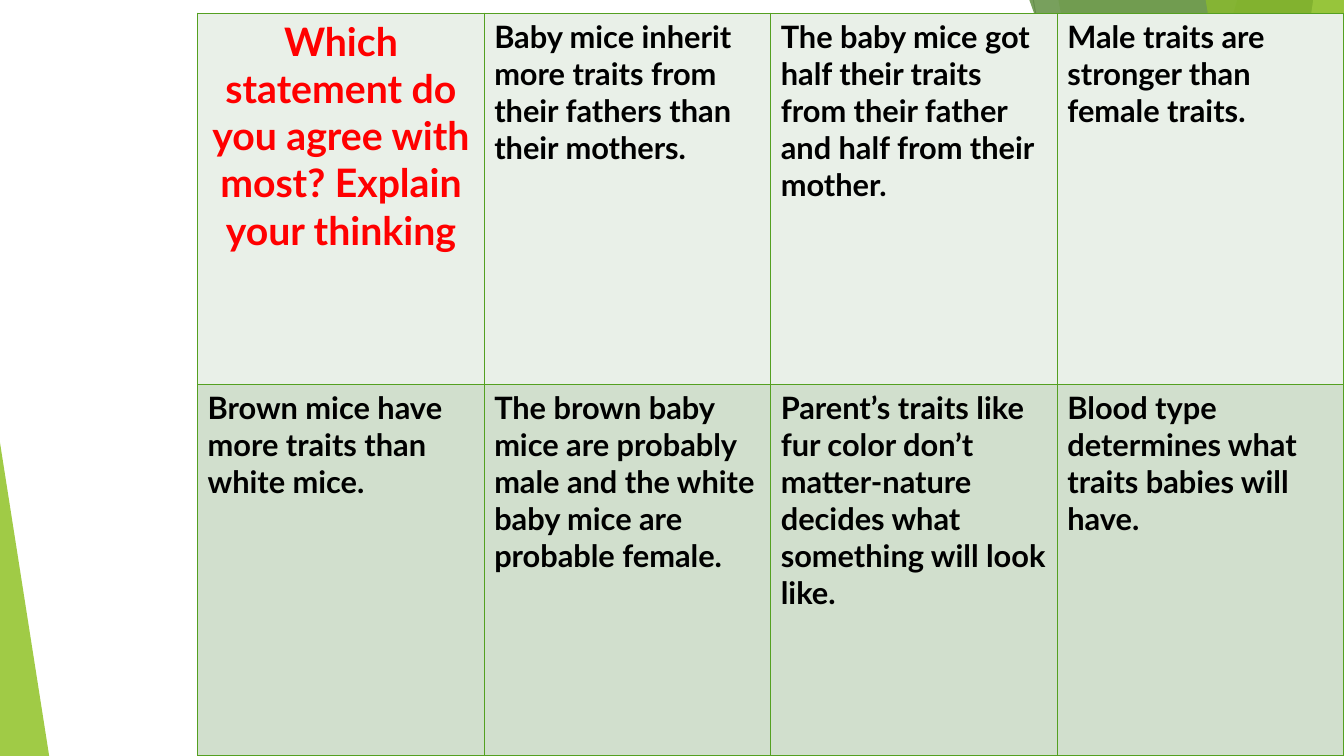
"""Build a slide with a grid of statements about inherited traits in mice."""
from dataclasses import dataclass

from lxml import etree
from pptx import Presentation
from pptx.dml.color import RGBColor
from pptx.enum.shapes import MSO_CONNECTOR, MSO_SHAPE
from pptx.enum.text import PP_ALIGN
from pptx.oxml.ns import qn
from pptx.util import Cm, Pt

STRAIGHT = MSO_CONNECTOR.STRAIGHT
TRIANGLE = MSO_SHAPE.ISOSCELES_TRIANGLE
LEFT, CENTER = PP_ALIGN.LEFT, PP_ALIGN.CENTER
WIDTH, HEIGHT = 33.87, 19.05
FACET_TOP = -0.03


@dataclass(frozen=True)
class Theme:
    font: str = "Lato"
    question_size: int = 28
    statement_size: int = 22
    question: str = "FF0000"
    statement: str = "000000"
    lime: str = "90C226"
    green: str = "54A021"
    forest: str = "3F7819"
    pale_lime: str = "C0E474"
    row_fills: tuple[str, str] = ("E9F0E8", "D1DFCD")
    border_width: float = 1
    ray_width: float = 0.75


THEME = Theme()


@dataclass(frozen=True)
class Ray:
    start: tuple[float, float]
    end: tuple[float, float]
    color: str


@dataclass(frozen=True)
class Facet:
    """Band from a slanted left edge to the right side of the slide."""
    top_x: float
    bottom_x: float
    color: str
    opacity: int


@dataclass(frozen=True)
class Corner:
    """Right triangle standing on the bottom of the slide."""
    left: float
    top: float
    width: float
    apex: float
    color: str
    opacity: int


RAYS = (
    Ray((26.04, 0), (29.41, HEIGHT), "BFBFBF"),
    Ray((WIDTH, 10.24), (20.62, HEIGHT), "D9D9D9"),
)
BACKDROP = (
    Facet(31.19, 25.5, THEME.lime, 30),
    Facet(26.67, 30.05, THEME.lime, 20),
    Corner(24.82, 8.46, 9.05, 1, THEME.green, 72),
    Facet(25.93, 32.79, THEME.forest, 70),
    Facet(33.1, 30.28, THEME.pale_lime, 70),
    Facet(30.38, 33.48, THEME.lime, 65),
    Corner(28.8, 9.98, 5.07, 1, THEME.lime, 80),
    Corner(0, 11.15, 1.24, 0, THEME.lime, 85),
)
STATEMENTS = (
    (
        "Which statement do you agree with most? Explain your thinking",
        "Baby mice inherit more traits from their fathers than their mothers.",
        "The baby mice got half their traits from their father and half from their mother.",
        "Male traits are stronger than female traits.",
    ),
    (
        "Brown mice have more traits than white mice.",
        "The brown baby mice are probably male and the white baby mice are probable female.",
        "Parent’s traits like fur color don’t matter-nature decides what something will look like.",
        "Blood type determines what traits babies will have.",
    ),
)
GRID_LEFT, GRID_TOP = 4.98, 0.33


def draw_ray(slide, ray: Ray) -> None:
    """Draw one thin line without a shadow."""
    line = slide.shapes.add_connector(STRAIGHT, *map(Cm, ray.start + ray.end))
    line.line.color.rgb = RGBColor.from_string(ray.color)
    line.line.width = Pt(THEME.ray_width)
    etree.SubElement(line._element.spPr, qn("a:effectLst"))


def paint(shape, color: str, opacity: int) -> None:
    """Give a shape a translucent fill and no outline or shadow."""
    shape.shadow.inherit = False
    shape.line.fill.background()
    shape.fill.solid()
    shape.fill.fore_color.rgb = RGBColor.from_string(color)
    swatch = shape._element.spPr.find(qn("a:solidFill"))[0]
    etree.SubElement(swatch, qn("a:alpha"), val=str(opacity * 1000))


def draw_facet(slide, facet: Facet) -> None:
    """Draw one slanted band."""
    outline = slide.shapes.build_freeform(Cm(facet.top_x), Cm(FACET_TOP))
    rest = ((WIDTH, FACET_TOP), (WIDTH, HEIGHT), (facet.bottom_x, HEIGHT))
    outline.add_line_segments([(Cm(x), Cm(y)) for x, y in rest], close=True)
    paint(outline.convert_to_shape(), facet.color, facet.opacity)


def draw_corner(slide, corner: Corner) -> None:
    """Draw one corner triangle."""
    triangle = slide.shapes.add_shape(
        TRIANGLE, Cm(corner.left), Cm(corner.top), Cm(corner.width), Cm(HEIGHT - corner.top)
    )
    triangle.adjustments[0] = corner.apex
    paint(triangle, corner.color, corner.opacity)


def write(frame, text: str, *, size: int, color: str, align=LEFT) -> None:
    """Write bold text into a text frame."""
    paragraph = frame.paragraphs[0]
    paragraph.alignment = align
    run = paragraph.add_run()
    run.text = text
    run.font.name = THEME.font
    run.font.size = Pt(size)
    run.font.bold = True
    run.font.color.rgb = RGBColor.from_string(color)


def style_cell(cell, fill: str) -> None:
    """Give a cell its four borders and its fill."""
    properties = cell._tc.get_or_add_tcPr()
    for side in ("lnL", "lnR", "lnT", "lnB"):
        border = etree.SubElement(properties, qn(f"a:{side}"), w=str(Pt(THEME.border_width)))
        solid = etree.SubElement(border, qn("a:solidFill"))
        etree.SubElement(solid, qn("a:srgbClr"), val=THEME.green)
    cell.fill.solid()
    cell.fill.fore_color.rgb = RGBColor.from_string(fill)


def draw_statements(slide) -> None:
    """Draw the grid with the question in its first cell."""
    grid = slide.shapes.add_table(
        len(STATEMENTS), len(STATEMENTS[0]), Cm(GRID_LEFT), Cm(GRID_TOP),
        Cm(WIDTH - GRID_LEFT), Cm(HEIGHT - GRID_TOP),
    ).table
    grid.first_row = grid.horz_banding = False
    for row, (statements, fill) in enumerate(zip(STATEMENTS, THEME.row_fills)):
        for column, statement in enumerate(statements):
            cell = grid.cell(row, column)
            style_cell(cell, fill)
            if row == column == 0:
                write(cell.text_frame, statement, size=THEME.question_size,
                      color=THEME.question, align=CENTER)
            else:
                write(cell.text_frame, statement, size=THEME.statement_size,
                      color=THEME.statement)


def main() -> None:
    """Build and save the presentation."""
    presentation = Presentation()
    presentation.slide_width, presentation.slide_height = Cm(WIDTH), Cm(HEIGHT)
    slide = presentation.slides.add_slide(presentation.slide_layouts.get_by_name("Blank"))
    for ray in RAYS:
        draw_ray(slide, ray)
    for piece in BACKDROP:
        if isinstance(piece, Facet):
            draw_facet(slide, piece)
        else:
            draw_corner(slide, piece)
    draw_statements(slide)
    presentation.save("out.pptx")


if __name__ == "__main__":
    main()
